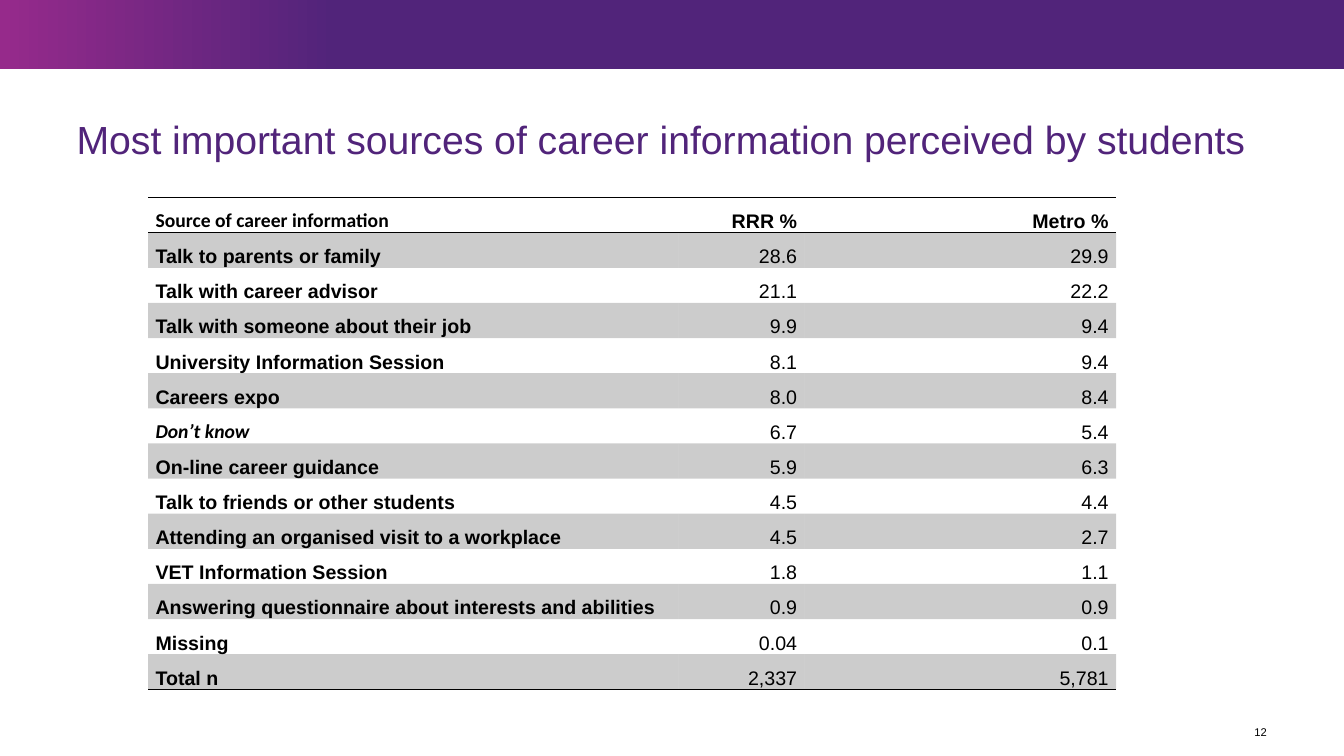
from dataclasses import dataclass

from lxml.etree import SubElement
from pptx import Presentation
from pptx.dml.color import RGBColor as RGB
from pptx.enum.shapes import MSO_SHAPE as SHAPE
from pptx.enum.text import MSO_ANCHOR as ANCHOR, MSO_AUTO_SIZE as AUTO, PP_ALIGN as ALIGN
from pptx.oxml import parse_xml
from pptx.oxml.ns import nsdecls, qn
from pptx.util import Cm, Pt

TITLE = "Most important sources of career information perceived by students"
PAGE = "12"
HEADER = ("Source of career information", "RRR %", "Metro %")
SOURCES = [
    ("Talk to parents or family", "28.6", "29.9"),
    ("Talk with career advisor", "21.1", "22.2"),
    ("Talk with someone about their job", "9.9", "9.4"),
    ("University Information Session", "8.1", "9.4"),
    ("Careers expo", "8.0", "8.4"),
    ("Don’t know", "6.7", "5.4"),
    ("On-line career guidance", "5.9", "6.3"),
    ("Talk to friends or other students", "4.5", "4.4"),
    ("Attending an organised visit to a workplace", "4.5", "2.7"),
    ("VET Information Session", "1.8", "1.1"),
    ("Answering questionnaire about interests and abilities", "0.9", "0.9"),
    ("Missing", "0.04", "0.1"),
    ("Total n", "2,337", "5,781"),
]
CALIBRI_LABELS = ("Source of career information", "Don’t know")
ITALIC_LABEL = "Don’t know"
COLUMN_WIDTHS = (13.37, 3.18, 7.85)
TABLE_HEIGHT = 12.4
NO_STYLE = "{2D5ABB26-0587-4C30-8999-92F81FD0307C}"


@dataclass(frozen=True)
class Theme:
    purple: RGB = RGB(0x51, 0x24, 0x7A)
    magenta: RGB = RGB(0x96, 0x2A, 0x8B)
    black: RGB = RGB(0, 0, 0)
    font: str = "Arial"
    label_font: str = "Calibri"
    title_size: int = 28
    table_size: int = 14
    page_size: int = 8
    band_opacity: int = 20


theme = Theme()


def style_text(p, size, color, font=theme.font, bold=False, italic=False):
    for r in p.runs:
        f = r.font
        f.name, f.size, f.bold, f.italic = font, Pt(size), bold, italic
        f.color.rgb = color


def reset_frame(tf):
    tf.margin_left = tf.margin_right = tf.margin_top = tf.margin_bottom = 0
    tf.vertical_anchor = ANCHOR.MIDDLE
    tf.auto_size = AUTO.NONE
    tf.word_wrap = True


def shade(cell):
    """Fill the cell with translucent black."""
    cell.fill.solid()
    cell.fill.fore_color.rgb = theme.black
    color = cell._tc.tcPr.find(f".//{qn('a:srgbClr')}")
    SubElement(color, qn("a:alpha"), val=str(theme.band_opacity * 1000))


def rule_cell(cell, sides):
    """Draw 1 pt borders; they must come before the fill, top then bottom."""
    for i, side in enumerate(sides):
        line = parse_xml(
            f'<a:ln{side} {nsdecls("a")} w="{Pt(1)}"><a:solidFill>'
            f'<a:srgbClr val="{theme.black}"/></a:solidFill></a:ln{side}>')
        cell._tc.get_or_add_tcPr().insert(i, line)


def add_band(slide, width):
    sp = slide.shapes.add_shape(SHAPE.RECTANGLE, 0, 0, width, Cm(1.75))
    sp.shadow.inherit = False
    sp.line.fill.background()
    sp.fill.gradient()
    sp.fill.gradient_angle = 0
    stops = ((0, theme.magenta), (0.25, theme.purple))
    for stop, (position, color) in zip(sp.fill.gradient_stops, stops):
        stop.position = position
        stop.color.rgb = color


def add_title(slide):
    sp = slide.shapes.title
    sp.left, sp.top, sp.width, sp.height = Cm(1.93), Cm(2.92), Cm(30), Cm(1.3)
    tf = sp.text_frame
    reset_frame(tf)
    tf.text = TITLE
    p = tf.paragraphs[0]
    p.alignment, p.line_spacing = ALIGN.LEFT, 0.9
    style_text(p, theme.title_size, theme.purple)


def add_sources_table(slide):
    rows = [HEADER, *SOURCES]
    frame = slide.shapes.add_table(
        len(rows), len(HEADER), Cm(3.73), Cm(4.98), Cm(sum(COLUMN_WIDTHS)), Cm(TABLE_HEIGHT))
    table = frame.table
    table.first_row = table.horz_banding = False
    frame.element.find(f".//{qn('a:tableStyleId')}").text = NO_STYLE
    for column, width in zip(table.columns, COLUMN_WIDTHS):
        column.width = Cm(width)

    for i, row in enumerate(rows):
        table.rows[i].height = Cm(TABLE_HEIGHT / len(rows))
        for j, text in enumerate(row):
            cell = table.cell(i, j)
            cell.margin_left = cell.margin_right = Cm(0.19)
            cell.margin_top = cell.margin_bottom = 0
            cell.vertical_anchor = ANCHOR.BOTTOM
            cell.text = text
            p = cell.text_frame.paragraphs[0]
            p.alignment = ALIGN.RIGHT if j else ALIGN.LEFT
            p.line_spacing = 1.07
            p.space_after = Pt(8 if i or j else 0)
            style_text(p, theme.table_size, theme.black,
                       font=theme.label_font if text in CALIBRI_LABELS else theme.font,
                       bold=i == 0 or j == 0, italic=text == ITALIC_LABEL)
            if i % 2:
                shade(cell)
            else:
                cell.fill.background()
            if i == 0:
                rule_cell(cell, "TB")
            elif i == len(rows) - 1:
                rule_cell(cell, "B")


def add_page_number(slide):
    tf = slide.shapes.add_textbox(Cm(31.14), Cm(18.11), Cm(0.79), Cm(0.66)).text_frame
    reset_frame(tf)
    tf.text = PAGE
    p = tf.paragraphs[0]
    p.alignment = ALIGN.RIGHT
    style_text(p, theme.page_size, theme.black)


def main():
    prs = Presentation()
    prs.slide_width, prs.slide_height = Cm(33.87), Cm(19.05)
    slide = prs.slides.add_slide(prs.slide_layouts[5])
    add_band(slide, prs.slide_width)
    add_sources_table(slide)
    add_title(slide)
    add_page_number(slide)
    prs.save("out.pptx")


if __name__ == "__main__":
    main()
